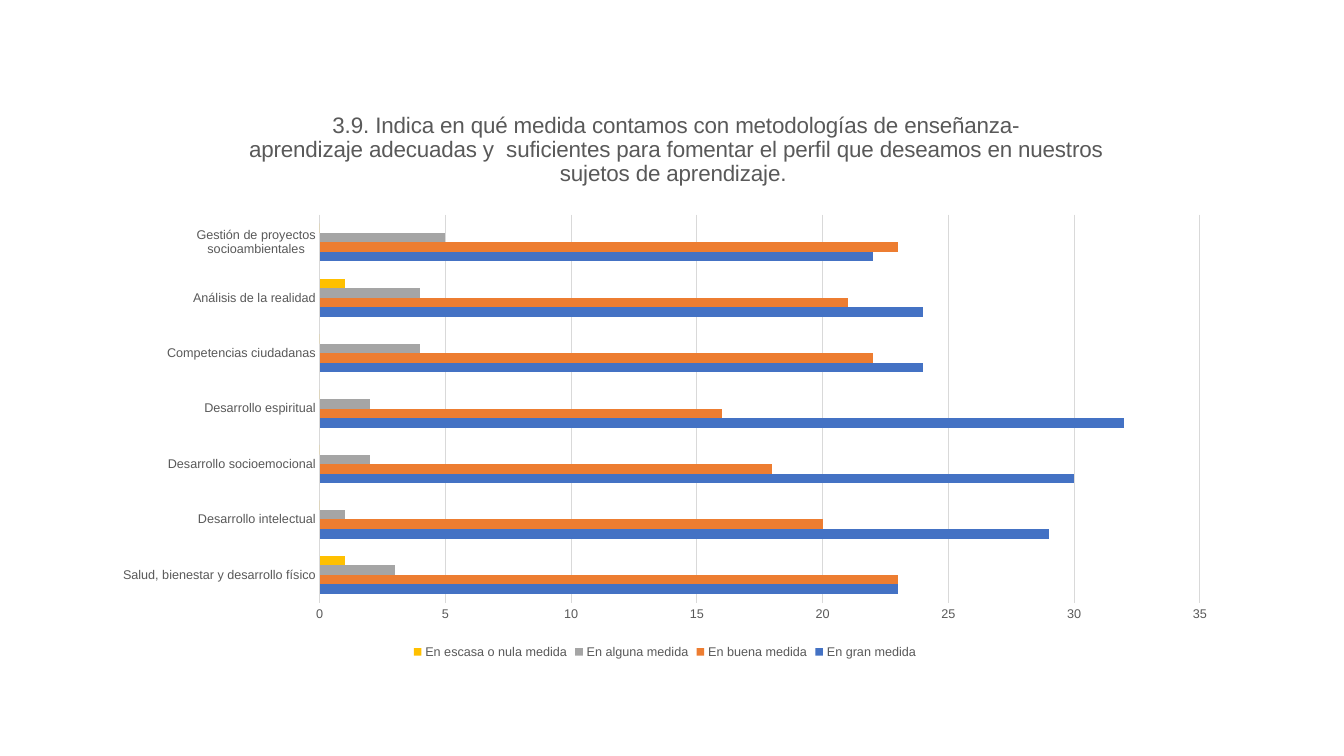
import pptx
import pptx.chart.data
import pptx.dml.color
import pptx.enum.chart
import pptx.oxml
import pptx.oxml.ns
import pptx.util

GREY = "595959"
LIGHT_GREY = "D9D9D9"
HARD_SPACE = chr(160)
TITLE = (
    f"3.9. Indica en qué medida contamos con{HARD_SPACE}metodologías de "
    f"enseñanza-aprendizaje{HARD_SPACE}adecuadas y{HARD_SPACE} suficientes para "
    f"fomentar el perfil que deseamos en nuestros sujetos de aprendizaje.{HARD_SPACE}"
)
CATEGORIES = [
    "Salud, bienestar y desarrollo físico",
    "Desarrollo intelectual",
    "Desarrollo socioemocional",
    "Desarrollo espiritual",
    "Competencias ciudadanas",
    "Análisis de la realidad",
    "Gestión de proyectos socioambientales",
]
ANSWERS = [
    ("En gran medida", "4472C4", [23, 29, 30, 32, 24, 24, 22]),
    ("En buena medida", "ED7D31", [23, 20, 18, 16, 22, 21, 23]),
    ("En alguna medida", "A5A5A5", [3, 1, 2, 2, 4, 4, 5]),
    ("En escasa o nula medida", "FFC000", [1, 0, 0, 0, 0, 1, 0]),
]
# Inches within the chart
CHART_WIDTH, CHART_HEIGHT = 11.19, 5.58
TITLE_PLACE = {"x": 1.43, "y": 0.06}
PLOT_PLACE = {"x": 2.17, "y": 1.13, "w": 8.73, "h": 3.85}


def set_color(color_format, hex_color):
    color_format.rgb = pptx.dml.color.RGBColor.from_string(hex_color)


def style_font(font, size):
    font.name = "Arial"
    font.size = pptx.util.Pt(size)
    font.bold = False
    set_color(font.color, GREY)


deck = pptx.Presentation()
deck.slide_width = pptx.util.Inches(13.33)
deck.slide_height = pptx.util.Inches(7.5)
page = deck.slides.add_slide(deck.slide_layouts[6])

chart_data = pptx.chart.data.CategoryChartData()
chart_data.categories = CATEGORIES
for name, _, values in ANSWERS:
    chart_data.add_series(name, values)

margin = pptx.util.Inches(1)
chart = page.shapes.add_chart(
    pptx.enum.chart.XL_CHART_TYPE.BAR_CLUSTERED,
    margin, margin, pptx.util.Inches(CHART_WIDTH), pptx.util.Inches(CHART_HEIGHT),
    chart_data,
).chart
style_font(chart.font, 9)

# Title
chart.has_title = True
heading = chart.chart_title.text_frame
heading.text = TITLE
style_font(heading.paragraphs[0].font, 16)

# Bars
plot = chart.plots[0]
plot.gap_width = 182
plot.overlap = 0
plot.vary_by_categories = False
for series, (_, color, _) in zip(plot.series, ANSWERS):
    series.format.fill.solid()
    set_color(series.format.fill.fore_color, color)

# Axes
for axis in (chart.category_axis, chart.value_axis):
    axis.major_tick_mark = pptx.enum.chart.XL_TICK_MARK.NONE
    axis.minor_tick_mark = pptx.enum.chart.XL_TICK_MARK.NONE
    style_font(axis.tick_labels.font, 9)
chart.value_axis.format.line.fill.background()
chart.value_axis.minimum_scale = 0
chart.value_axis.maximum_scale = 35
chart.value_axis.major_unit = 5
chart.value_axis.has_major_gridlines = True
for line in (chart.category_axis.format.line, chart.value_axis.major_gridlines.format.line):
    line.width = pptx.util.Pt(0.75)
    set_color(line.color, LIGHT_GREY)

# Legend
chart.has_legend = True
chart.legend.position = pptx.enum.chart.XL_LEGEND_POSITION.BOTTOM
chart.legend.include_in_layout = False
style_font(chart.legend.font, 9)

# Places of the title and the plot area, as shares of the chart
full_lengths = {"x": CHART_WIDTH, "w": CHART_WIDTH, "y": CHART_HEIGHT, "h": CHART_HEIGHT}
modes = "".join(f'<c:{axis}Mode val="edge"/>' for axis in "xy")
for tag, place, target, position in (
    ("c:title", TITLE_PLACE, "", 1),
    ("c:plotArea", PLOT_PLACE, '<c:layoutTarget val="inner"/>', 0),
):
    part = chart.element.find(".//" + pptx.oxml.ns.qn(tag))
    for old_layout in part.findall(pptx.oxml.ns.qn("c:layout")):
        part.remove(old_layout)
    shares = "".join(
        f'<c:{key} val="{length / full_lengths[key]}"/>' for key, length in place.items()
    )
    part.insert(position, pptx.oxml.parse_xml(
        f'<c:layout {pptx.oxml.ns.nsdecls("c")}><c:manualLayout>'
        f"{target}{modes}{shares}</c:manualLayout></c:layout>"
    ))
chart.chart_title.include_in_layout = False

deck.save("out.pptx")
